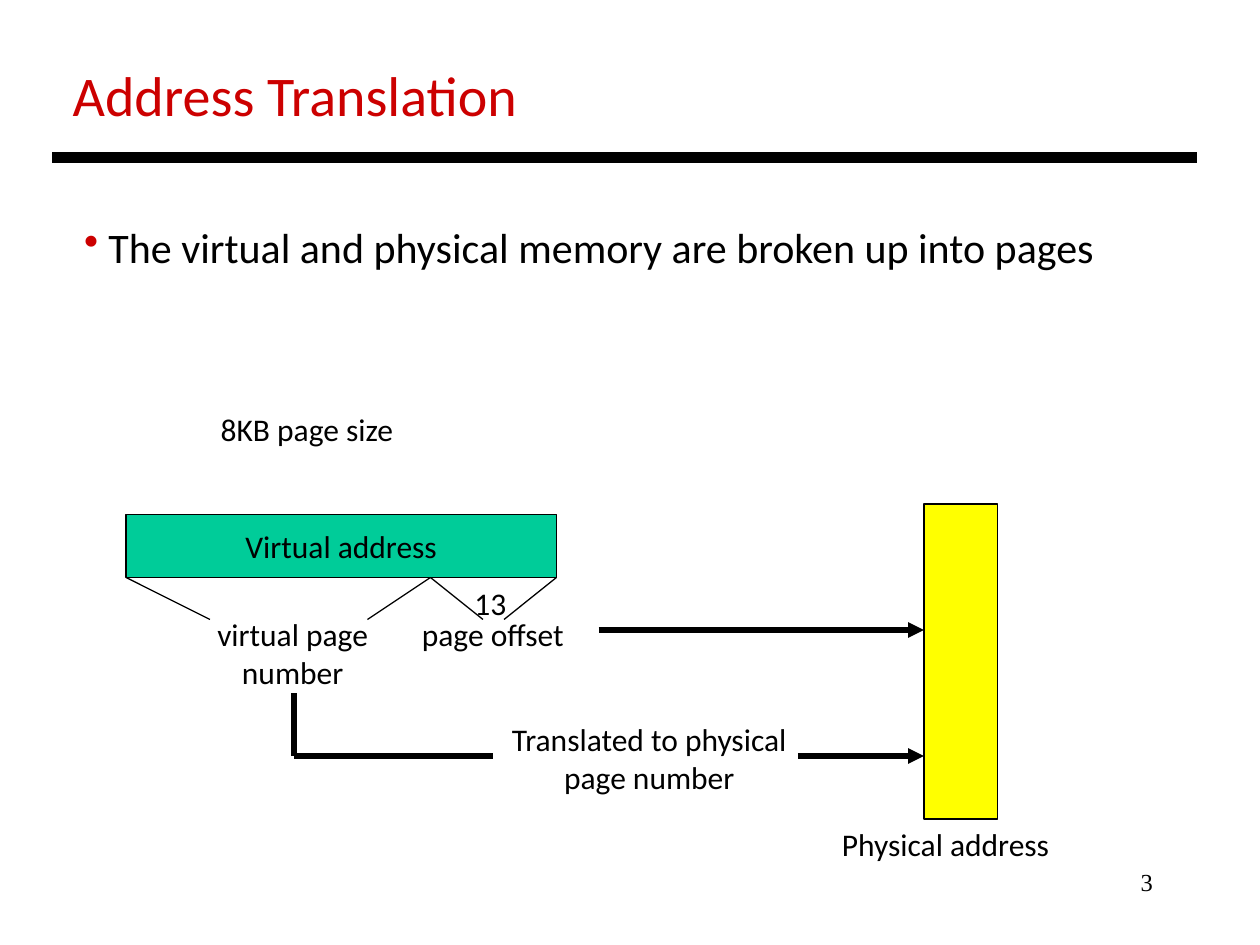
from pptx import Presentation
from pptx.dml.color import RGBColor
from pptx.enum.shapes import MSO_CONNECTOR as CONN, MSO_SHAPE as SHAPE
from pptx.enum.text import MSO_ANCHOR as ANCHOR, MSO_AUTO_SIZE as AUTO, PP_ALIGN as ALIGN
from pptx.oxml.ns import qn
from pptx.util import Pt
from lxml.etree import SubElement

BLACK, RED, GREEN, YELLOW = "000000", "CC0000", "00CC99", "FFFF00"


def color(value):
    return RGBColor.from_string(value)


def write(tf, lines, size=18, ink=BLACK, align=ALIGN.LEFT, font="Calibri"):
    for i, line in enumerate(lines):
        p = tf.paragraphs[0] if i == 0 else tf.add_paragraph()
        p.alignment = align
        r = p.add_run()
        r.text = line
        r.font.name, r.font.size = font, Pt(size)
        r.font.color.rgb = color(ink)


def add_text(slide, box, *lines, wrap=False, **style):
    tf = slide.shapes.add_textbox(*map(Pt, box)).text_frame
    tf.word_wrap = wrap
    tf.auto_size = AUTO.NONE if wrap else AUTO.SHAPE_TO_FIT_TEXT
    write(tf, lines, **style)
    return tf


def add_line(slide, start, end, width=0.75, arrow=False):
    ln = slide.shapes.add_connector(CONN.STRAIGHT, *map(Pt, (*start, *end)))
    ln.line.width = Pt(width)
    ln.line.color.rgb = color(BLACK)
    if arrow:
        SubElement(ln.line._get_or_add_ln(), qn("a:tailEnd"), type="triangle")
    SubElement(ln._element.spPr, qn("a:effectLst"))


def add_block(slide, box, fill, *lines):
    sp = slide.shapes.add_shape(SHAPE.RECTANGLE, *map(Pt, box))
    sp.shadow.inherit = False
    sp.fill.solid()
    sp.fill.fore_color.rgb = color(fill)
    sp.line.color.rgb = color(BLACK)
    sp.line.width = Pt(0.75)
    tf = sp.text_frame
    tf.word_wrap = False
    tf.vertical_anchor = ANCHOR.MIDDLE
    write(tf, lines, align=ALIGN.CENTER)


def add_header(slide, x, y, w, h):
    add_text(slide, (x + 4.5, y, 271.5, 46), "Address Translation", size=32, ink=RED)
    add_line(slide, (x, y + h), (x + w, y + h), width=6)


def add_bullet(slide, x, y, w, h):
    tf = add_text(slide, (x, y, w, h),
                  " The virtual and physical memory are broken up into pages", size=24)
    pPr = tf.paragraphs[0]._p.get_or_add_pPr()
    SubElement(SubElement(pPr, qn("a:buClr")), qn("a:srgbClr"), val=RED)
    SubElement(pPr, qn("a:buChar"), char="•")


def add_virtual_address(slide, x, y, w, h):
    """Address bar, split into page number and offset."""
    add_text(slide, (x + 47, y - 63, 114.5, 29), "8KB page size")
    add_block(slide, (x, y, w, h), GREEN, "Virtual address")
    # Braces from the bar down to the two fields
    split, bottom = x + 174, y + h
    for top, end in ((x, x + 48), (split, x + 138), (split, x + 204), (x + w, x + 216)):
        add_line(slide, (top, bottom), (end, bottom + 24))
    add_text(slide, (x + 44.5, bottom + 18, 101.5, 51), "virtual page", "number",
             align=ALIGN.CENTER)
    add_text(slide, (x + 162, bottom + 18, 97, 29), "page offset")
    add_text(slide, (x + 192, bottom, 33, 29), "13")


def add_translation(slide, x, y, w, h):
    """Paths from the two fields to the physical address."""
    right, bottom = x + w, y + h
    add_line(slide, (x + 174, y), (right, y), 3, arrow=True)
    add_line(slide, (x, y + 36), (x, bottom), 3)
    add_line(slide, (x, bottom), (x + 114, bottom), 3)
    add_text(slide, (x + 116.5, bottom - 24, 173, 51), "Translated to physical",
             "page number", align=ALIGN.CENTER)
    add_line(slide, (x + 288, bottom), (right, bottom), 3, arrow=True)


def add_physical_address(slide, x, y, w, h):
    add_block(slide, (x, y, w, h), YELLOW)
    add_text(slide, (x - 54, y + h, 134, 29), "Physical address")


def main():
    prs = Presentation()
    prs.slide_width, prs.slide_height = Pt(720), Pt(540)
    slide = prs.slides.add_slide(prs.slide_layouts[6])
    add_header(slide, 30, 31, 654, 59)
    add_bullet(slide, 41, 123, 600.5, 36)
    add_virtual_address(slide, 72, 294, 246, 36)
    add_translation(slide, 168, 360, 360, 72)
    add_physical_address(slide, 528, 288, 42, 180)
    # Page number
    add_text(slide, (516, 492, 150, 36), "3", wrap=True, size=14,
             align=ALIGN.RIGHT, font="Times New Roman")
    prs.save("out.pptx")


if __name__ == "__main__":
    main()
